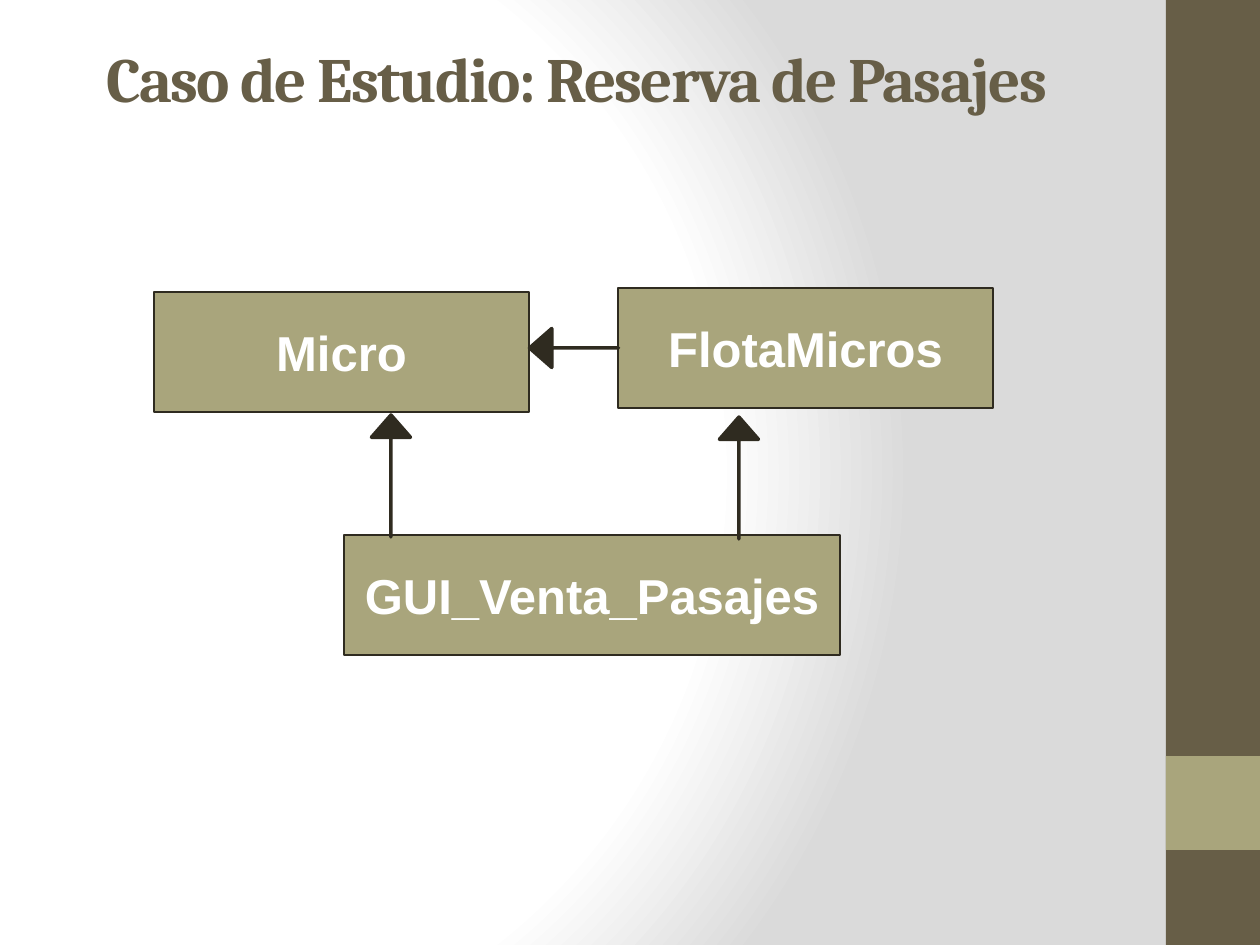
from lxml.etree import SubElement
from pptx import Presentation
from pptx.dml.color import RGBColor
from pptx.enum.shapes import MSO_SHAPE as Shape
from pptx.enum.text import MSO_ANCHOR as Anchor, PP_ALIGN as Align
from pptx.oxml.ns import qn
from pptx.util import Pt

PX = 914400 // 126
WIDTH, HEIGHT = 1260, 945
BROWN, OLIVE, DARK, WHITE = "675E47", "A9A57C", "2F2B20", "FFFFFF"
BOX_HEIGHT, ARROW_HEIGHT = 120, 39


def px(*lengths):
    """Turn pixel lengths into EMU."""
    return [round(length * 914400 / 126) for length in lengths]


def color(hex_code):
    """Turn a hex string into a colour."""
    return RGBColor.from_string(hex_code)


def add_filled(slide, kind, box, fill, line_width=0):
    """Add a plain shape with a fill and an optional dark outline."""
    shape = slide.shapes.add_shape(kind, *px(*box))
    shape.shadow.inherit = False
    shape.fill.solid()
    shape.fill.fore_color.rgb = color(fill)
    if line_width:
        shape.line.color.rgb = color(DARK)
        shape.line.width = Pt(line_width)
    else:
        shape.line.fill.background()
    return shape


def style_text(paragraph, text, font, size, hex_code):
    """Write bold text into a paragraph."""
    paragraph.text = text
    paragraph.font.name = font
    paragraph.font.size = Pt(size)
    paragraph.font.bold = True
    paragraph.font.color.rgb = color(hex_code)


def paint_background(slide):
    """Fill the background with a circular white to grey gradient."""
    slide.background.fill.gradient()
    gradient = slide.element.find(".//" + qn("a:gradFill"))
    for child in list(gradient):
        gradient.remove(child)
    stops = SubElement(gradient, qn("a:gsLst"))
    for position, hex_code in ((0, WHITE), (75, WHITE), (100, "DADADA")):
        stop = SubElement(stops, qn("a:gs"), pos=str(position * 1000))
        SubElement(stop, qn("a:srgbClr"), val=hex_code)
    circle = SubElement(gradient, qn("a:path"), {"path": "circle"})
    SubElement(circle, qn("a:fillToRect"), l="20000", t="50000", r="100000", b="50000")


def add_sidebar(slide, left, top, width, height):
    """Draw the brown band with its olive square."""
    add_filled(slide, Shape.RECTANGLE, (left, top, width, height), BROWN)
    add_filled(slide, Shape.RECTANGLE, (left, top + height * 4 // 5, width, width), OLIVE)


def add_title(slide, left, top, width, height):
    """Write the slide title."""
    title = slide.shapes.add_textbox(*px(left, top, width, height)).text_frame
    title.word_wrap = True
    title.vertical_anchor = Anchor.MIDDLE
    heading = title.paragraphs[0]
    style_text(heading, "Caso de Estudio: Reserva de Pasajes", "Cambria", 36, BROWN)
    heading.runs[0].font._element.set("spc", "-100")


def add_class_box(slide, name, left, top, width):
    """Draw a class as a named rectangle."""
    box = (left, top, width, BOX_HEIGHT)
    frame = add_filled(slide, Shape.RECTANGLE, box, OLIVE, 0.75).text_frame
    frame.word_wrap = False
    frame.vertical_anchor = Anchor.MIDDLE
    frame.paragraphs[0].alignment = Align.CENTER
    style_text(frame.paragraphs[0], name, "Arial", 28, WHITE)


def add_use_arrow(slide, center_x, center_y, length, rotation):
    """Draw a turned thin arrow around its centre."""
    box = (center_x - length / 2, center_y - ARROW_HEIGHT / 2, length, ARROW_HEIGHT)
    arrow = add_filled(slide, Shape.RIGHT_ARROW, box, DARK, 2)
    arrow.adjustments[0] = 0
    arrow.adjustments[1] = 0.57
    arrow.rotation = rotation


def add_class_diagram(slide, left, top):
    """Draw the three classes and the arrows between them."""
    add_class_box(slide, "Micro", left, top + 4, 375)
    add_class_box(slide, "FlotaMicros", left + 464, top, 375)
    add_use_arrow(slide, left + 420, top + 60, 89, 180)
    add_class_box(slide, "GUI_Venta_Pasajes", left + 190, top + 247, 496)
    add_use_arrow(slide, left + 237, top + 188, 122, 270)
    add_use_arrow(slide, left + 585, top + 190, 122, 270)


def main():
    """Build and save the slide."""
    deck = Presentation()
    deck.slide_width, deck.slide_height = px(WIDTH, HEIGHT)
    slide = deck.slides.add_slide(deck.slide_layouts[6])
    paint_background(slide)
    add_sidebar(slide, 1166, 0, 94, HEIGHT)
    add_title(slide, 94, 0, 1071, 155)
    add_class_diagram(slide, 154, 288)
    deck.save("out.pptx")


if __name__ == "__main__":
    main()
